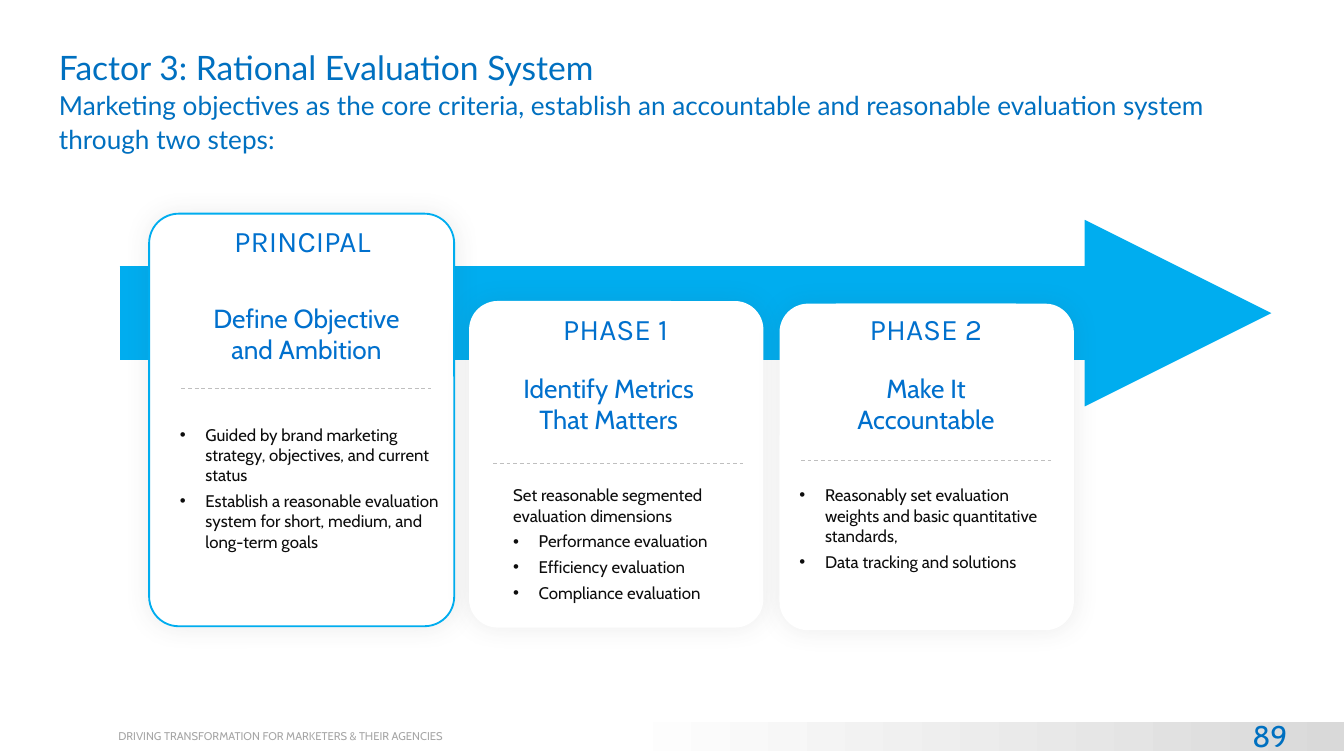
from lxml import etree
from pptx import Presentation, util as u
from pptx.dml.color import RGBColor
from pptx.enum import dml, shapes, text
from pptx.oxml import parse_xml
from pptx.oxml.ns import qn

A = 'xmlns:a="http://schemas.openxmlformats.org/drawingml/2006/main"'
SHADOW = (f'<a:effectLst {A}><a:outerShdw blurRad="165100" dist="0" dir="5400000" algn="t" '
          'rotWithShape="0"><a:srgbClr val="474747"><a:alpha val="10000"/></a:srgbClr>'
          '</a:outerShdw></a:effectLst>')
BLUE, CYAN = "0070CD", "00ADEF"
rgb = RGBColor.from_string


def add_text(box, paras, size, color, font="Cabin", center=False, bullets=0, after=None,
             inset=(0.1, 0.05), spacing=None):
    """Write paras in a box given by its bounds; the last `bullets` of them get bullets.
    A para is a string or a list of (string, size) lines."""
    sp = s.shapes.add_textbox(*map(u.Inches, box))
    tf = sp.text_frame
    tf.word_wrap = True
    tf.margin_left = tf.margin_right = u.Inches(inset[0])
    tf.margin_top = tf.margin_bottom = u.Inches(inset[1])
    for i, para in enumerate(paras):
        p = tf.paragraphs[0] if i == 0 else tf.add_paragraph()
        if i >= len(paras) - bullets:
            pPr = p._p.get_or_add_pPr()
            pPr.set("marL", str(u.Inches(0.19)))
            pPr.set("indent", str(u.Inches(-0.19)))
            etree.SubElement(pPr, qn("a:buFont"), typeface="Arial")
            etree.SubElement(pPr, qn("a:buChar"), char="•")
        if center:
            p.alignment = text.PP_ALIGN.CENTER
        if after:
            p.space_after = u.Pt(after)
        if spacing:
            p.line_spacing = u.Pt(spacing)
        lines = [(para, size)] if isinstance(para, str) else para
        for n, (line, line_size) in enumerate(lines):
            if n:
                p.add_line_break()
            r = p.add_run()
            r.text = line
            r.font.size, r.font.name = u.Pt(line_size), font
            r.font.color.rgb = rgb(color)
    return sp


def add_line(x1, x2, y, color, width):
    cx = s.shapes.add_connector(shapes.MSO_CONNECTOR.STRAIGHT,
                                *map(u.Inches, (x1, y, x2, y)))
    cx.line.color.rgb, cx.line.width = rgb(color), u.Pt(width)
    etree.SubElement(cx._element.spPr, qn("a:effectLst"))
    return cx


prs = Presentation()
prs.slide_width = u.Inches(10)
prs.slide_height = prs.slide_width * 9 // 16
s = prs.slides.add_slide(prs.slide_layouts[6])

# Footer
band = s.shapes.add_shape(shapes.MSO_SHAPE.RECTANGLE,
                          *map(u.Inches, (4.57, 5.37, 5.44, 0.22)))
band.shadow.inherit = False
band.line.fill.background()
band.fill.gradient()
band.fill.gradient_angle = 0
for stop, color in zip(band.fill.gradient_stops, ("FFFFFF", "D9D9D9")):
    stop.color.rgb = rgb(color)
add_text((0.81, 5.39, 4.71, 0.18), ["DRIVING TRANSFORMATION FOR MARKETERS & THEIR AGENCIES"],
         6, "A6A6A6", inset=(0.07, 0.04))
add_text((9.22, 5.29, 0.74, 0.25), ["89"], 16, "0070C0")

# Arrow behind the cards
arrow = add_line(0.89, 9.46, 2.33, CYAN, 50)
etree.SubElement(arrow.line._get_or_add_ln(), qn("a:tailEnd"), type="triangle", w="sm", len="sm")

# Each card: bounds, outline, label, heading, divider start and height, body, bullet count
cards = [
    ((1.11, 1.59, 2.27, 3.07), CYAN, "PRINCIPAL", (1.58, 1.61),
     "Define Objective and Ambition", (1.42, 2.2, 1.72, 0.57), (1.35, 2.89),
     ["Guided by brand marketing strategy, objectives, and current status",
      "Establish a reasonable evaluation system for short, medium, and long-term goals"],
     (1.24, 3.11, 2.13, 1.05), 2),
    ((3.49, 2.24, 2.19, 2.43), None, "PHASE 1", (3.91, 2.26),
     "Identify Metrics That Matters", (3.6, 2.72, 1.86, 0.57), (3.67, 3.45),
     ["Set reasonable segmented evaluation dimensions", "Performance evaluation",
      "Efficiency evaluation", "Compliance evaluation"],
     (3.72, 3.56, 1.86, 0.98), 3),
    ((5.8, 2.26, 2.19, 2.43), None, "PHASE 2", (6.22, 2.26),
     "Make It Accountable", (6.22, 2.72, 1.34, 0.57), (5.96, 3.43),
     ["Reasonably set evaluation weights and basic quantitative standards,",
      "Data tracking and solutions"],
     (5.85, 3.56, 2.08, 0.75), 2),
]
for (bounds, outline, label, label_at, heading, heading_box,
     (x, y), body, body_box, bullets) in cards:
    sp = s.shapes.add_shape(shapes.MSO_SHAPE.ROUNDED_RECTANGLE, *map(u.Inches, bounds))
    sp.adjustments[0] = 0.097
    sp.fill.solid()
    sp.fill.fore_color.rgb = rgb("FFFFFF")
    if outline:
        sp.line.color.rgb, sp.line.width = rgb(outline), u.Pt(1)
    else:
        sp.line.fill.background()
    sp._element.spPr.append(parse_xml(SHADOW))

    tag = add_text((*label_at, 1.34, 0.37), [label], 16, BLUE, font="Karla", center=True)
    tag.fill.solid()
    tag.fill.fore_color.rgb = rgb("FFFFFF")
    add_text(heading_box, [heading], 14, BLUE, center=True)
    add_line(x, x + 1.86, y, "BFBFBF", 0.5).line.dash_style = dml.MSO_LINE.DASH
    add_text(body_box, body, 9, "0D0D0D", bullets=bullets, after=3)

# Title
add_text((0.34, 0.35, 8.99, 0.69),
         [[("Factor 3: Rational Evaluation System", 18),
           ("Marketing objectives as the core criteria, establish an accountable and "
            "reasonable evaluation system through two steps:", 14)]],
         18, "0070C0", font="Lato", spacing=18)

prs.save("out.pptx")
